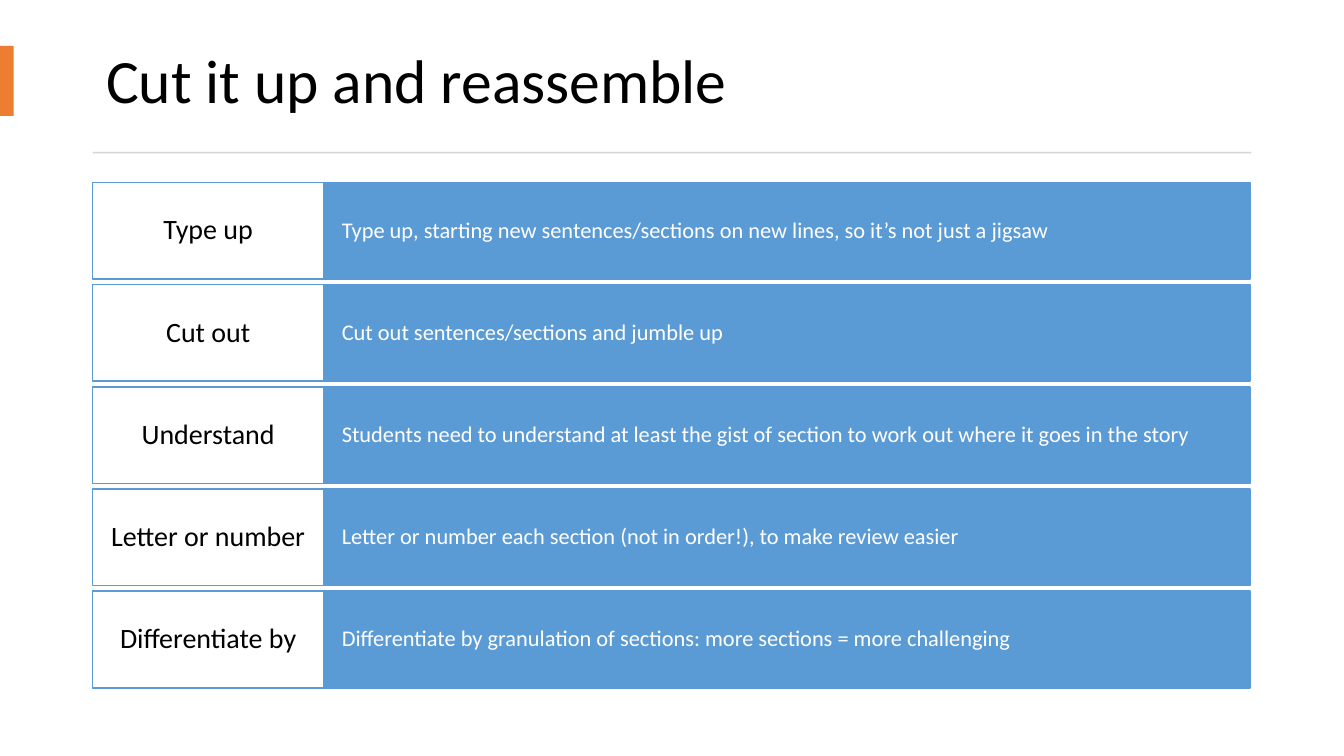
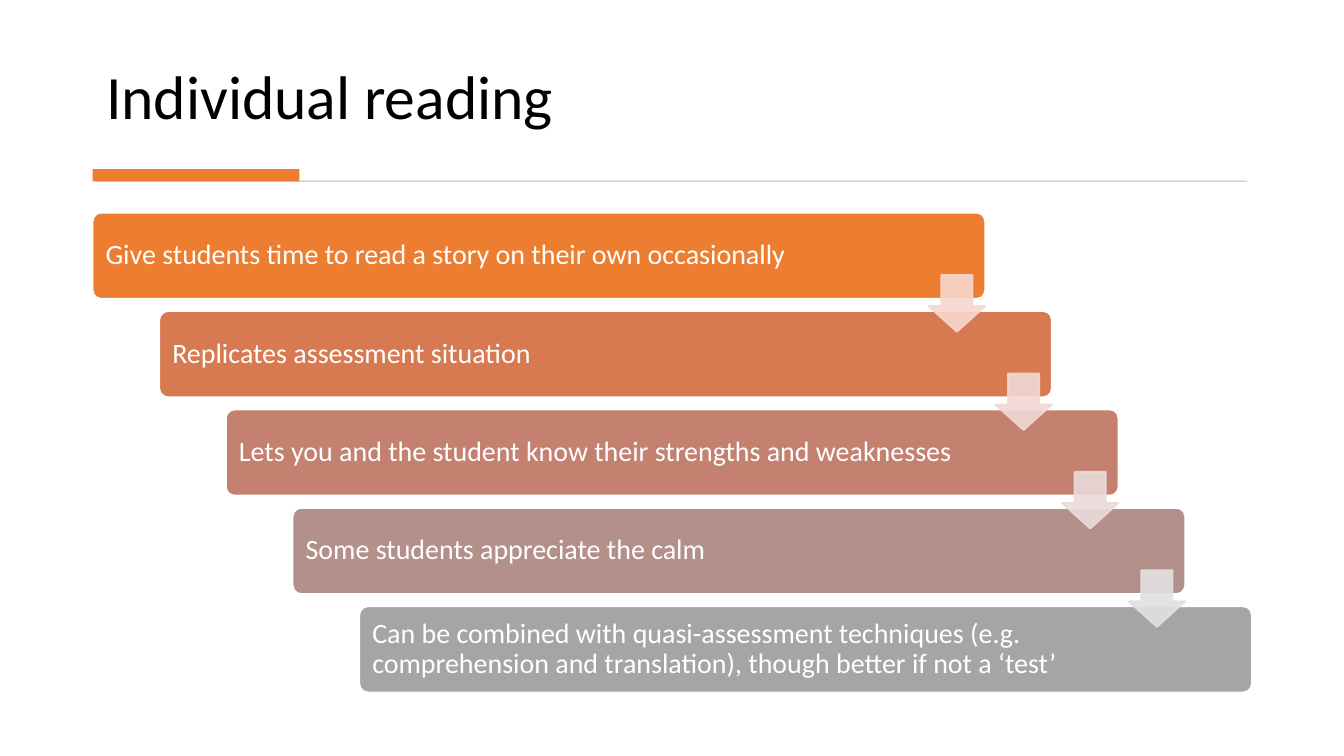
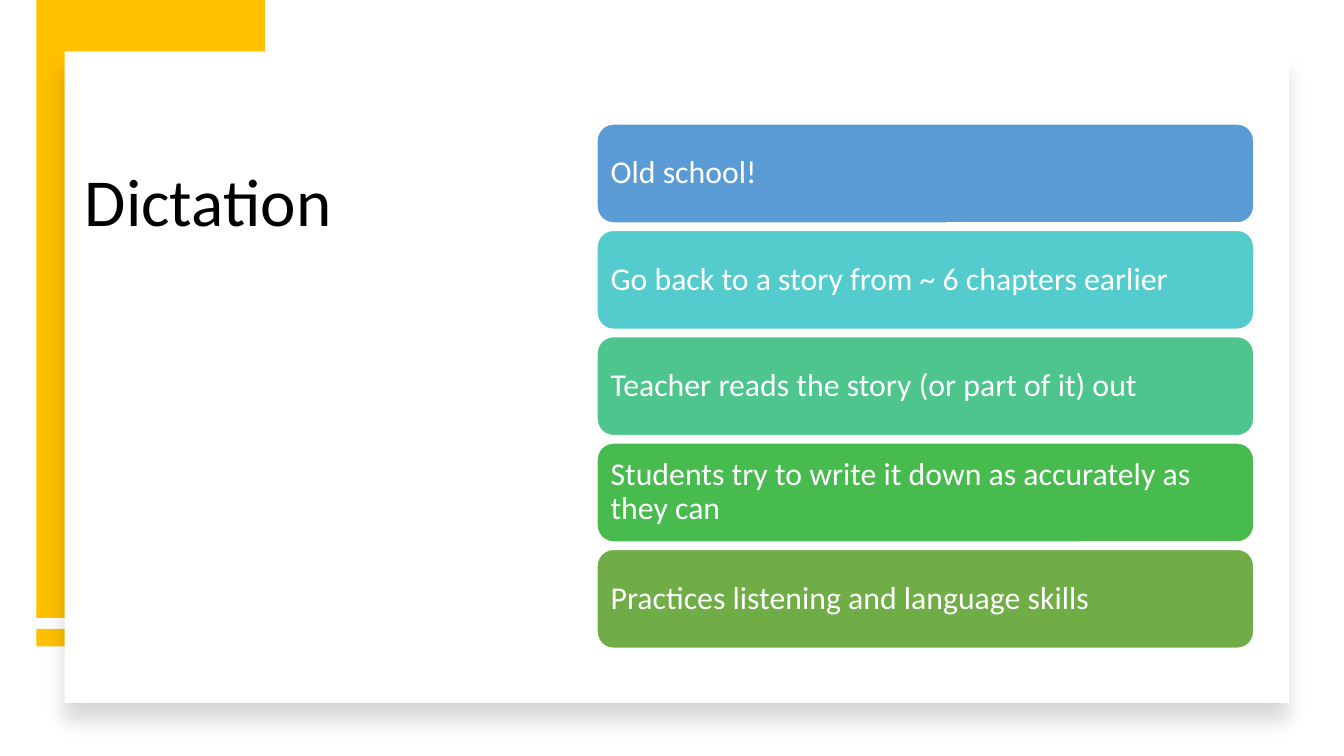
from dataclasses import dataclass
from typing import NamedTuple, Optional

from lxml.etree import SubElement
from pptx import Presentation
from pptx.dml.color import RGBColor
from pptx.enum.shapes import MSO_SHAPE as Preset
from pptx.enum.text import MSO_ANCHOR as Anchor, PP_ALIGN as Align
from pptx.oxml.ns import qn
from pptx.util import Cm, Pt


@dataclass(frozen=True)
class Theme:
    font: str = "Calibri"
    black: str = "000000"
    white: str = "FFFFFF"
    rule: str = "D5D5D5"
    orange: str = "ED7D31"
    gold: str = "FFC000"
    blue: str = "5B9BD5"
    cascade: tuple = ("ED7D31", "D87A51", "C48170", "B4908B", "A5A5A5")
    arrows: tuple = ("F8D7CE", "F1D8D4", "E9DBDA", "E1E1E1")
    stack: tuple = ("5B9BD5", "54CCCD", "4DC58D", "48BB4F", "70AD47")
    title_size: float = 33
    large_title_size: float = 36
    detail_size: float = 12
    label_size: float = 15
    stack_size: float = 17
    line_spacing: float = 0.9
    outline: float = 1


THEME = Theme()


class Frame(NamedTuple):
    left: float
    top: float
    width: float
    height: float

    def lengths(self):
        return [Cm(value) for value in self]

    def shifted(self, index, across, down):
        return self._replace(left=self.left + index * across, top=self.top + index * down)


class Margins(NamedTuple):
    left: float
    top: float
    right: float
    bottom: float


class Label(NamedTuple):
    text: str
    size: float
    margins: Margins
    color: str = THEME.white
    align: Align = Align.LEFT


@dataclass(frozen=True)
class Block:
    frame: Frame
    fill: str
    line: Optional[str] = None
    preset: Preset = Preset.RECTANGLE
    adjustments: tuple = ()
    label: Optional[Label] = None
    opacity: Optional[int] = None


class Step(NamedTuple):
    name: str
    detail: str


def format_paragraph(para, size, color, align):
    para.alignment = align
    para.line_spacing = THEME.line_spacing
    para.font.name = THEME.font
    para.font.size = Pt(size)
    para.font.color.rgb = RGBColor.from_string(color)


def write_label(shape, label: Label):
    box = shape.text_frame
    box.word_wrap = True
    box.vertical_anchor = Anchor.MIDDLE
    box.margin_left, box.margin_top, box.margin_right, box.margin_bottom = map(Cm, label.margins)
    box.text = label.text
    format_paragraph(box.paragraphs[0], label.size, label.color, label.align)


def draw_block(page, block: Block):
    shape = page.shapes.add_shape(block.preset, *block.frame.lengths())
    shape.shadow.inherit = False
    for index, value in enumerate(block.adjustments):
        shape.adjustments[index] = value
    shape.fill.solid()
    shape.fill.fore_color.rgb = RGBColor.from_string(block.fill)
    if block.line:
        shape.line.color.rgb = RGBColor.from_string(block.line)
        shape.line.width = Pt(THEME.outline)
    else:
        shape.line.fill.background()
    if block.opacity:
        for color in shape.element.spPr.iter(qn("a:srgbClr")):
            SubElement(color, qn("a:alpha"), val=str(block.opacity * 1000))
    if block.label:
        write_label(shape, block.label)
    return shape


def cast_shadow(shape, opacity, blur, distance, angle):
    effects = shape.element.spPr.find(qn("a:effectLst"))
    shadow = SubElement(effects, qn("a:outerShdw"), blurRad=str(Pt(blur)),
                        dist=str(Pt(distance)), dir=str(angle * 60000),
                        algn="t", rotWithShape="0")
    color = SubElement(shadow, qn("a:srgbClr"), val=THEME.black)
    SubElement(color, qn("a:alpha"), val=str(opacity * 1000))


TITLE_FRAME = Frame(1.75, 0.53, 21.9, 2.11)


def add_page(deck, text, anchor, frame=TITLE_FRAME, size=THEME.title_size):
    page = deck.slides.add_slide(deck.slide_layouts[5])
    title = page.shapes.title
    title.left, title.top, title.width, title.height = frame.lengths()
    box = title.text_frame
    box.word_wrap = True
    box.vertical_anchor = anchor
    box.text = text
    format_paragraph(box.paragraphs[0], size, THEME.black, Align.LEFT)
    return page


def build_reassemble(deck):
    page = add_page(deck, "Cut it up and reassemble", Anchor.MIDDLE)
    draw_block(page, Block(Frame(0, 0.87, 0.26, 1.32), THEME.orange))
    draw_block(page, Block(Frame(1.75, 2.87, 21.9, 0.03), THEME.rule))
    steps = [
        Step("Type up", "Type up, starting new sentences/sections on new lines, so it’s not just a jigsaw"),
        Step("Cut out", "Cut out sentences/sections and jumble up"),
        Step("Understand", "Students need to understand at least the gist of section to work out where it goes in the story"),
        Step("Letter or number", "Letter or number each section (not in order!), to make review easier"),
        Step("Differentiate by", "Differentiate by granulation of sections: more sections = more challenging"),
    ]
    detail_frame = Frame(6.12, 3.45, 17.5, 1.83)
    name_frame = Frame(1.75, 3.45, 4.37, 1.83)
    for index, step in enumerate(steps):
        detail = Label(step.detail, THEME.detail_size, Margins(0.34, 0.46, 0.34, 0.46))
        name = Label(step.name, THEME.label_size, Margins(0.23, 0.18, 0.23, 0.18),
                     THEME.black, Align.CENTER)
        draw_block(page, Block(detail_frame.shifted(index, 0, 1.93), THEME.blue, THEME.blue, label=detail))
        draw_block(page, Block(name_frame.shifted(index, 0, 1.93), THEME.white, THEME.blue, label=name))


def build_reading(deck):
    page = add_page(deck, "Individual reading", Anchor.BOTTOM)
    draw_block(page, Block(Frame(1.8, 3.41, 21.77, 0.03), THEME.rule))
    draw_block(page, Block(Frame(1.75, 3.2, 3.91, 0.23), THEME.orange))
    reasons = [
        "Give students time to read a story on their own occasionally",
        "Replicates assessment situation",
        "Lets you and the student know their strengths and weaknesses",
        "Some students appreciate the calm",
        "Can be combined with quasi-assessment techniques (e.g. comprehension and translation), "
        "though better if not a ‘test’",
    ]
    across, down = 1.26, 1.86
    bar_frame = Frame(1.75, 4.02, 16.87, 1.63)
    arrow_frame = Frame(17.55, 5.2, 1.07, 1.07)
    for index, (reason, fill) in enumerate(zip(reasons, THEME.cascade)):
        label = Label(reason, THEME.label_size, Margins(0.2, 0.2, 2.55, 0.2))
        draw_block(page, Block(bar_frame.shifted(index, across, down), fill, THEME.white,
                               Preset.ROUNDED_RECTANGLE, (0.1,), label))
    for index, color in enumerate(THEME.arrows):
        draw_block(page, Block(arrow_frame.shifted(index, across, down), color, color,
                               Preset.DOWN_ARROW, (0.55, 0.45), opacity=90))


def build_dictation(deck):
    page = add_page(deck, "Dictation", Anchor.TOP, Frame(1.35, 3.05, 7.9, 5.61),
                    THEME.large_title_size)
    draw_block(page, Block(Frame(0.69, 11.89, 4.32, 0.33), THEME.gold))
    draw_block(page, Block(Frame(0.69, 0, 4.32, 11.68), THEME.gold))
    panel = draw_block(page, Block(Frame(1.22, 0.97, 23.14, 12.32), THEME.white))
    cast_shadow(panel, 15, 11, 10, 90)
    panel.element.addnext(page.shapes.title.element)
    points = [
        "Old school!",
        "Go back to a story from ~ 6 chapters earlier",
        "Teacher reads the story (or part of it) out",
        "Students try to write it down as accurately as they can",
        "Practices listening and language skills",
    ]
    point_frame = Frame(11.28, 2.34, 12.42, 1.88)
    for index, (point, fill) in enumerate(zip(points, THEME.stack)):
        label = Label(point, THEME.stack_size, Margins(0.17, 0.17, 0.17, 0.17))
        draw_block(page, Block(point_frame.shifted(index, 0, 2.01), fill, THEME.white,
                               Preset.ROUNDED_RECTANGLE, label=label))


def main():
    deck = Presentation()
    deck.slide_width = Cm(25.4)
    deck.slide_height = Cm(14.29)
    build_reassemble(deck)
    build_reading(deck)
    build_dictation(deck)
    deck.save("out.pptx")


if __name__ == "__main__":
    main()
